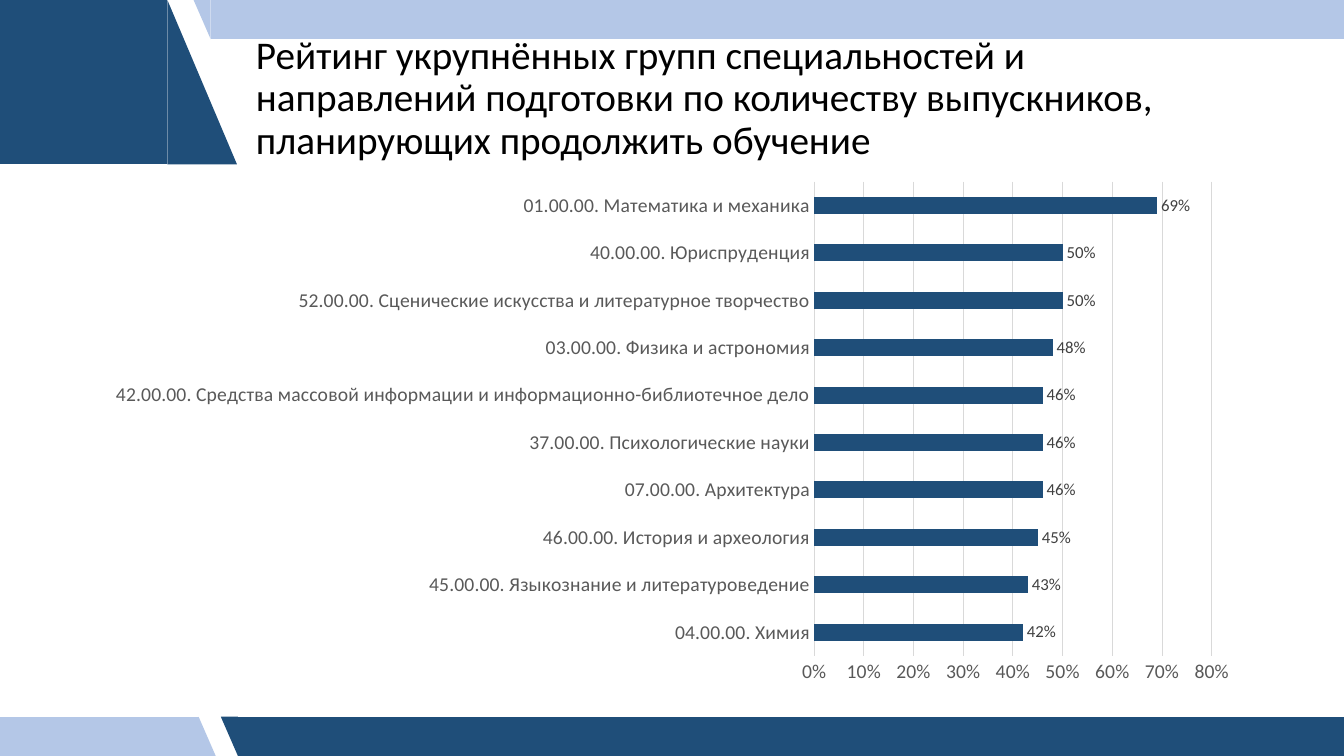
from pptx import Presentation
from pptx.chart.data import CategoryChartData
from pptx.dml.color import RGBColor
from pptx.enum.chart import XL_CHART_TYPE, XL_LABEL_POSITION, XL_TICK_MARK
from pptx.enum.shapes import MSO_SHAPE
from pptx.enum.text import MSO_ANCHOR
from pptx.util import Inches, Pt

NAVY = RGBColor(0x1F, 0x4E, 0x79)
PALE_BLUE = RGBColor(0xB4, 0xC7, 0xE7)
BLACK = RGBColor(0x00, 0x00, 0x00)
AXIS_GREY = RGBColor(0x59, 0x59, 0x59)
LABEL_GREY = RGBColor(0x40, 0x40, 0x40)
LINE_GREY = RGBColor(0xD9, 0xD9, 0xD9)
FONT = "Calibri"
WIDTH, HEIGHT = 13.33, 7.5
STRIP = 0.39  # height of the top and bottom bands

TITLE = ("Рейтинг укрупнённых групп специальностей и направлений подготовки "
         "по количеству выпускников, планирующих продолжить обучение")
SHARES = [
    ("04.00.00. Химия", 0.42),
    ("45.00.00. Языкознание и литературоведение", 0.43),
    ("46.00.00. История и археология", 0.45),
    ("07.00.00. Архитектура", 0.46),
    ("37.00.00. Психологические науки", 0.46),
    ("42.00.00. Средства массовой информации и информационно-библиотечное дело", 0.46),
    ("03.00.00. Физика и астрономия", 0.48),
    ("52.00.00. Сценические искусства и литературное творчество", 0.5),
    ("40.00.00. Юриспруденция", 0.5),
    ("01.00.00. Математика и механика", 0.69),
]


def add_block(page, kind, left, top, width, height, color, rotation):
    block = page.shapes.add_shape(
        kind, Inches(left), Inches(top), Inches(width), Inches(height))
    block.shadow.inherit = False
    block.fill.solid()
    block.fill.fore_color.rgb = color
    block.line.fill.background()
    block.rotation = rotation


def add_band(page, left, top, width, height, slant, color, slant_on_left=False):
    """Rectangle with a slanted end; the slant lies inside the given width."""
    turn = 180 if slant_on_left else 0
    body_left = left + slant if slant_on_left else left
    slant_left = left if slant_on_left else left + width - slant
    add_block(page, MSO_SHAPE.FLOWCHART_PROCESS, body_left, top,
              width - slant, height, color, turn)
    add_block(page, MSO_SHAPE.RIGHT_TRIANGLE, slant_left, top,
              slant, height, color, turn)


def add_frame(page, width, height):
    bottom = height - STRIP
    add_band(page, 2.19, bottom, width - 2.19, STRIP, 0.17, NAVY, True)
    add_band(page, 0, bottom, 2.14, STRIP, 0.17, PALE_BLUE)
    add_band(page, 1.92, 0, width - 1.92, STRIP, 0.17, PALE_BLUE, True)
    add_band(page, 0, 0, 2.35, 1.63, 0.69, NAVY)


def style_font(font, size, color):
    font.name = FONT
    font.size = Pt(size)
    font.color.rgb = color


def add_title(page, left, top, width, height):
    box = page.shapes.add_textbox(
        Inches(left), Inches(top), Inches(width), Inches(height))
    frame = box.text_frame
    frame.word_wrap = True
    frame.vertical_anchor = MSO_ANCHOR.MIDDLE
    para = frame.paragraphs[0]
    para.line_spacing = 0.9
    span = para.add_run()
    span.text = TITLE
    style_font(span.font, 28, BLACK)


def style_axis(axis):
    axis.major_tick_mark = XL_TICK_MARK.NONE
    axis.minor_tick_mark = XL_TICK_MARK.NONE
    style_font(axis.tick_labels.font, 14, AXIS_GREY)


def style_line(line):
    line.color.rgb = LINE_GREY
    line.width = Pt(0.75)


def add_rating_chart(page, left, top, width, height):
    data = CategoryChartData(number_format="0%")
    data.categories = [name for name, share in SHARES]
    data.add_series("Доля выпускников", [share for name, share in SHARES])
    chart = page.shapes.add_chart(
        XL_CHART_TYPE.BAR_CLUSTERED, Inches(left), Inches(top),
        Inches(width), Inches(height), data).chart
    chart.has_legend = False
    chart.has_title = False
    style_font(chart.font, 10, BLACK)

    # Axes
    style_axis(chart.category_axis)
    style_line(chart.category_axis.format.line)
    chart.category_axis.has_major_gridlines = False
    shares = chart.value_axis
    style_axis(shares)
    shares.format.line.fill.background()
    shares.has_major_gridlines = True
    style_line(shares.major_gridlines.format.line)
    shares.minimum_scale, shares.maximum_scale, shares.major_unit = 0, 0.8, 0.1
    shares.tick_labels.number_format = "0%"
    shares.tick_labels.number_format_is_linked = False

    # Bars and their labels
    plot = chart.plots[0]
    plot.vary_by_categories = False
    plot.gap_width = 182
    bars = plot.series[0]
    bars.format.fill.solid()
    bars.format.fill.fore_color.rgb = NAVY
    labels = bars.data_labels
    labels.show_value = True
    labels.position = XL_LABEL_POSITION.OUTSIDE_END
    labels.number_format = "0%"
    labels.number_format_is_linked = False
    style_font(labels.font, 12, LABEL_GREY)


def main():
    deck = Presentation()
    deck.slide_width, deck.slide_height = Inches(WIDTH), Inches(HEIGHT)
    page = deck.slides.add_slide(deck.slide_layouts[6])
    add_frame(page, WIDTH, HEIGHT)
    add_title(page, 2.44, 0.5, 10.01, 0.97)
    add_rating_chart(page, 0.92, 1.7, 11.5, 5.19)
    deck.save("out.pptx")


if __name__ == "__main__":
    main()
